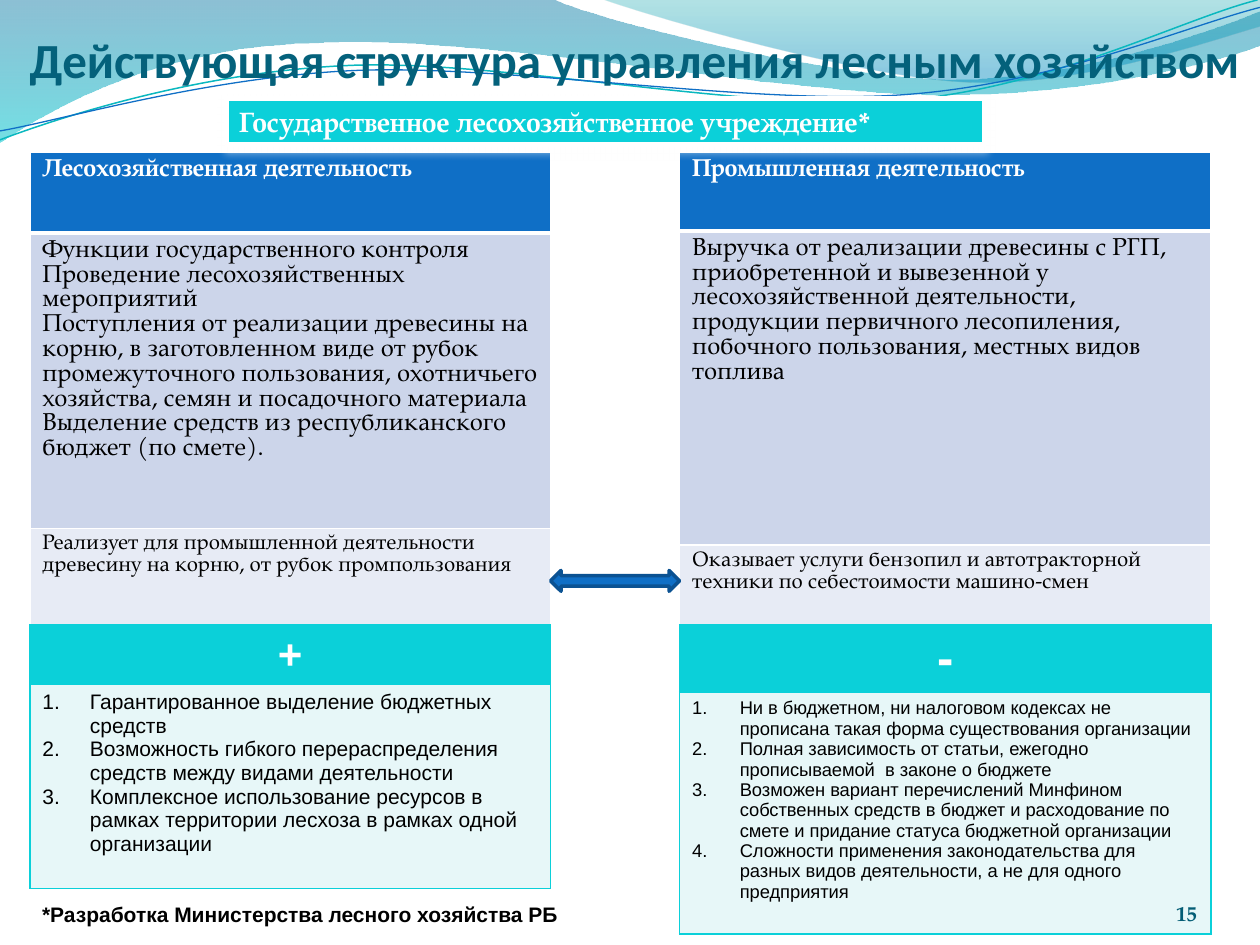
"""Build a slide on the current structure of forestry management."""
from lxml import etree
from pptx import Presentation
from pptx.dml.color import RGBColor
from pptx.enum.shapes import MSO_SHAPE
from pptx.enum.text import MSO_ANCHOR, PP_ALIGN
from pptx.oxml import parse_xml
from pptx.oxml.ns import qn
from pptx.util import Cm, Pt

RECT, ARROW = MSO_SHAPE.RECTANGLE, MSO_SHAPE.LEFT_RIGHT_ARROW
TOP, MID, BASE = MSO_ANCHOR.TOP, MSO_ANCHOR.MIDDLE, MSO_ANCHOR.BOTTOM
LEFT, CENTER, RIGHT = PP_ALIGN.LEFT, PP_ALIGN.CENTER, PP_ALIGN.RIGHT
NS = "http://schemas.openxmlformats.org/drawingml/2006/main"

SERIF, SANS, HEAD = "TeX Gyre Pagella", "Arial", "Calibri"
THEME = {
    "white": "FFFFFF", "black": "000000", "blue": "0F6FC6", "edge": "0B5292",
    "aqua": "0BD0D9", "teal": "0AB8BF", "title": "04617B", "page": "045D75",
    "band": "CCD5EA", "pale": "E7EBF5", "mint": "E7F7F8",
    "sky": "0074A1", "sea": "00C6CF", "lagoon": "00A1A9", "deep": "008BBF",
}
STYLE = {
    "title": (HEAD, 28, "title", True),
    "banner": (SERIF, 16, "white", True),
    "top": (SERIF, 14, "white", True),
    "body": (SERIF, 14, "black", False),
    "deal": (SERIF, 12, "black", False),
    "plus": (SANS, 24, "white", True),
    "minus": (SANS, 28, "white", True),
    "pros": (SANS, 12, "black", False),
    "cons": (SANS, 10.5, "black", False),
    "note": (SANS, 12, "black", True),
    "page": (SERIF, 12, "page", True),
}
FILL = {"top": "blue", "body": "band", "deal": "pale", "plus": "aqua",
        "minus": "aqua", "pros": "mint", "cons": "mint"}

TITLE = "Действующая структура управления лесным хозяйством"
BANNER = "Государственное лесохозяйственное учреждение*"
NOTE = "*Разработка Министерства лесного хозяйства РБ"
PAGE = "15"
COLS = [
    {"left": 0.6, "width": 10.5,
     "work": [
         ("top", 1.63, ["Лесохозяйственная деятельность"]),
         ("body", 5.95, [
             "Функции государственного контроля",
             "Проведение лесохозяйственных мероприятий",
             "Поступления от реализации древесины на корню, в заготовленном виде от рубок "
             "промежуточного пользования, охотничьего хозяйства, семян и посадочного материала",
             "Выделение средств из республиканского бюджет (по смете)."]),
         ("deal", 2.34, ["Реализует для промышленной деятельности древесину на корню, "
                         "от рубок промпользования"])],
     "view": [
         ("plus", 1.2, ["+"]),
         ("pros", 4.11, [
             "Гарантированное выделение бюджетных средств",
             "Возможность гибкого перераспределения средств между видами деятельности",
             "Комплексное использование ресурсов в рамках территории лесхоза "
             "в рамках одной организации"])]},
    {"left": 13.7, "width": 10.71,
     "work": [
         ("top", 1.59, ["Промышленная деятельность"]),
         ("body", 6.33, ["Выручка от реализации древесины с РГП, приобретенной и вывезенной у "
                         "лесохозяйственной деятельности, продукции первичного лесопиления, "
                         "побочного пользования, местных видов топлива"]),
         ("deal", 2.87, ["Оказывает услуги бензопил и автотракторной техники "
                         "по себестоимости машино-смен"])],
     "view": [
         ("minus", 1.35, ["-"]),
         ("cons", 4.88, [
             "Ни в бюджетном, ни налоговом кодексах не прописана такая форма "
             "существования организации",
             "Полная зависимость от статьи, ежегодно прописываемой  в законе о бюджете",
             "Возможен вариант перечислений Минфином собственных средств в бюджет и "
             "расходование по смете и придание статуса бюджетной организации",
             "Сложности применения законодательства для разных видов деятельности, "
             "а не для одного предприятия"])]},
]
WAVES = [
    ((0, 0), [[(11.18, 0)], [(12.09, 0.43), (16.87, 1.6), (19.25, 1.6)],
              [(21.67, 1.6), (24.33, 0.66), (25.4, 0.23)], [(25.4, 0.91)],
              [(24.97, 1.12), (22.1, 1.93), (18.95, 1.91)],
              [(15.8, 1.91), (9.7, 0.71), (6.53, 0.86)],
              [(3.28, 0.91), (1.17, 2.11), (0, 2.87)]],
     [("sky", 0, 45), ("sea", 1, 55)]),
    ((12.17, 0), [[(12.93, 0.28), (17.32, 1.57), (19.53, 1.65)],
                  [(21.74, 1.75), (24.41, 0.81), (25.4, 0.53)], [(25.4, 0)]],
     [("lagoon", 0, 30), ("deep", 0.8, 45)]),
]
LINES = [
    ((0, 2.82), [[(1.22, 2.36), (4.01, 1.45), (7.04, 1.32)],
                 [(10.03, 1.19), (15.06, 2.26), (18.11, 2.03)],
                 [(21.16, 1.8), (23.83, 0.38), (25.35, 0)]], "teal", 0.85),
    ((0, 2.64), [[(1.19, 2.44), (4.17, 1.55), (7.19, 1.42)],
                 [(10.24, 1.3), (15.16, 2.13), (18.21, 1.91)],
                 [(21.23, 1.7), (23.9, 0.53), (25.4, 0.15)]], "blue", 0.75),
]


def tint(name):
    """Return a theme colour."""
    return RGBColor.from_string(THEME[name])


def write(frame, text, role, align=LEFT):
    """Set text and format its runs by role."""
    face, size, hue, bold = STYLE[role]
    frame.text = text
    for para in frame.paragraphs:
        para.alignment = align
        for run in para.runs:
            font = run.font
            font.name, font.size, font.bold = face, Pt(size), bold
            font.color.rgb = tint(hue)


def label(slide, box, text, role, align=LEFT, anchor=TOP, pads=None):
    """Add a wrapped text box."""
    frame = slide.shapes.add_textbox(*map(Cm, box)).text_frame
    frame.word_wrap, frame.vertical_anchor = True, anchor
    if pads:
        (frame.margin_left, frame.margin_top,
         frame.margin_right, frame.margin_bottom) = map(Cm, pads)
    write(frame, text, role, align)


def trace(slide, start, steps, close):
    """Add a freeform of straight steps and cubic curves."""
    form = slide.shapes.build_freeform(*map(Cm, start))
    form.add_line_segments([(Cm(x), Cm(y)) for step in steps for x, y in step], close=close)
    shape = form.convert_to_shape()
    shape.shadow.inherit = False
    parts = iter(list(shape._element.spPr.iter(qn("a:lnTo"))))
    for step in steps:
        first, *rest = [next(parts) for _ in step]
        if rest:
            first.tag = qn("a:cubicBezTo")
            for part in rest:
                first.append(part[0])
                part.getparent().remove(part)
    return shape


def wave(slide, start, steps, stops):
    """Add a translucent gradient wave."""
    shape = trace(slide, start, steps, True)
    shape.line.fill.background()
    shape.fill.gradient()
    shape.fill.gradient_angle = 270
    for stop, (hue, place, _) in zip(shape.fill.gradient_stops, stops):
        stop.color.rgb, stop.position = tint(hue), place
    for node, (_, _, alpha) in zip(shape._element.spPr.iter(qn("a:srgbClr")), stops):
        etree.SubElement(node, qn("a:alpha")).set("val", str(alpha * 1000))


def border(cell, hue, sides):
    """Draw the four cell sides with widths in points."""
    props = cell._tc.get_or_add_tcPr()
    for i, (side, width) in enumerate(zip("LRTB", sides)):
        props.insert(i, parse_xml(
            f'<a:ln{side} xmlns:a="{NS}" w="{width * 12700}"><a:solidFill>'
            f'<a:srgbClr val="{THEME[hue]}"/></a:solidFill></a:ln{side}>'))


def count(frame):
    """Number the paragraphs with a hanging indent."""
    for para in frame.paragraphs:
        props = para._p.get_or_add_pPr()
        props.set("marL", str(Cm(0.96)))
        props.set("indent", str(-Cm(0.96)))
        etree.SubElement(props, qn("a:buAutoNum")).set("type", "arabicPeriod")


def grid(slide, left, top, width, rows, edge):
    """Add a one-column table."""
    high = sum(row[1] for row in rows)
    table = slide.shapes.add_table(
        len(rows), 1, *map(Cm, (left, top, width, high))).table
    for i, (role, tall, lines) in enumerate(rows):
        table.rows[i].height = Cm(tall)
        cell, sign = table.cell(i, 0), role in ("plus", "minus")
        write(cell.text_frame, "\n".join(lines), role, CENTER if sign else LEFT)
        if sign:
            cell.margin_bottom = Cm(0)
        cell.fill.solid()
        cell.fill.fore_color.rgb = tint(FILL[role])
        border(cell, edge, (1, 1, 3 if role == "body" else 1, 3 if role == "top" else 1))
        if role in ("pros", "cons"):
            count(cell.text_frame)


def block(slide, kind, box, fill, edge, width):
    """Add a filled and outlined preset shape."""
    shape = slide.shapes.add_shape(kind, *map(Cm, box))
    shape.shadow.inherit = False
    shape.fill.solid()
    shape.fill.fore_color.rgb = tint(fill)
    shape.line.color.rgb, shape.line.width = tint(edge), Pt(width)
    return shape


def main():
    """Assemble and save the slide."""
    deck = Presentation()
    deck.slide_width, deck.slide_height = Cm(25.4), Cm(19.05)
    slide = deck.slides.add_slide(deck.slide_layouts[6])
    for item in WAVES:
        wave(slide, *item)
    for start, steps, hue, width in LINES:
        curve = trace(slide, start, steps, False)
        curve.fill.background()
        curve.line.color.rgb, curve.line.width = tint(hue), Pt(width)
    label(slide, (0.6, 0.58, 24.8, 1.2), TITLE, "title", LEFT, BASE, (0, 0.13, 0, 0))
    for part, top, edge in (("work", 3.07, "white"), ("view", 12.6, "aqua")):
        for col in COLS:
            grid(slide, col["left"], top, col["width"], col[part], edge)
    banner = block(slide, RECT, (4.57, 1.98, 15.28, 0.94), "aqua", "white", 3)
    banner.text_frame.word_wrap, banner.text_frame.vertical_anchor = True, MID
    write(banner.text_frame, BANNER, "banner")
    glow = banner._element.spPr.find(qn("a:effectLst"))
    glow.append(parse_xml(
        f'<a:outerShdw xmlns:a="{NS}" blurRad="57150" dist="38100" dir="5400000">'
        f'<a:srgbClr val="{THEME["white"]}"><a:alpha val="48000"/></a:srgbClr></a:outerShdw>'))
    label(slide, (0.6, 18.04, 12.7, 0.9), NOTE, "note")
    start = COLS[0]["left"] + COLS[0]["width"]
    block(slide, ARROW, (start, 11.5, COLS[1]["left"] - start, 0.42), "blue", "edge", 2)
    label(slide, (22.02, 17.65, 2.11, 1.02), PAGE, "page", RIGHT, BASE, (0, 0, 0, 0))
    deck.save("out.pptx")


if __name__ == "__main__":
    main()
